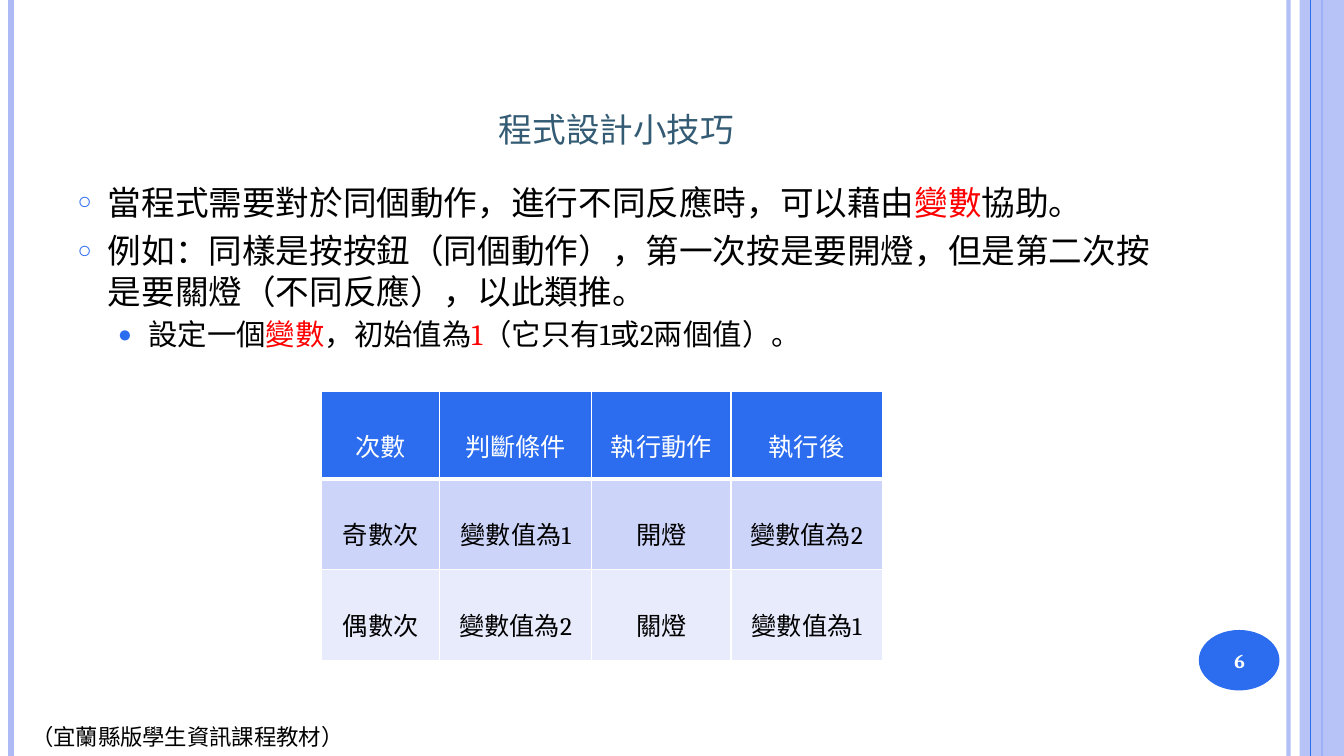
from lxml.etree import SubElement as Sub
from pptx import Presentation
from pptx.dml.color import RGBColor
from pptx.enum.shapes import MSO_CONNECTOR as Link, MSO_SHAPE as Kind
from pptx.enum.text import MSO_ANCHOR as Anchor, MSO_AUTO_SIZE as Auto, PP_ALIGN as Align
from pptx.oxml.ns import qn
from pptx.util import Pt

SCALE = 9144
FONT = "Cambria"
BLUE, PALE, BLACK, WHITE, RED = "2C6DF0", "ADBAF6", "000000", "FFFFFF", "FF0000"


def px(*nums):
    return [num * SCALE for num in nums]


def paint(part, color, alpha=100):
    part.solid()
    part.fore_color.rgb = RGBColor.from_string(color)
    if alpha < 100:
        node = part._xPr.find(qn("a:solidFill"))[0]
        Sub(node, qn("a:alpha"), val=str(alpha * 1000))


def write(para, *runs, size, color=BLACK, bold=False, caps=False,
          align=Align.LEFT, before=0, lines=1):
    para.alignment = align
    para.space_before = Pt(before)
    para.line_spacing = lines
    for item in runs:
        words, tint = item if isinstance(item, tuple) else (item, color)
        run = para.add_run()
        run.text = words
        font = run.font
        font.name, font.size, font.bold = FONT, Pt(size), bold
        font.color.rgb = RGBColor.from_string(tint)
        if caps:
            font._element.set("cap", "small")


def rule(slide, x, width, color, alpha=100):
    line = slide.shapes.add_connector(Link.STRAIGHT, *px(x, 0, x, 750))
    line.line.width = Pt(width)
    paint(line.line.fill, color, alpha)
    Sub(line._element.spPr, qn("a:effectLst"))


def block(slide, kind, box, color, alpha=100):
    shape = slide.shapes.add_shape(kind, *px(*box))
    shape.shadow.inherit = False
    paint(shape.fill, color, alpha)
    shape.line.fill.background()


def label(slide, box, words, wrap=True, anchor=Anchor.TOP, **style):
    frame = slide.shapes.add_textbox(*px(*box)).text_frame
    frame.word_wrap = wrap
    frame.vertical_anchor = anchor
    write(frame.paragraphs[0], words, **style)


def place(holder, box, anchor):
    holder.left, holder.top, holder.width, holder.height = px(*box)
    frame = holder.text_frame
    frame.auto_size = Auto.NONE
    frame.vertical_anchor = anchor
    return frame


def bullet(para, sign, ratio, left):
    props = para._p.get_or_add_pPr()
    props.set("marL", str(left * SCALE))
    props.set("indent", str(-30 * SCALE))
    Sub(Sub(props, qn("a:buClr")), qn("a:srgbClr"), val=BLUE)
    Sub(props, qn("a:buSzPct"), val=str(ratio * 1000))
    Sub(props, qn("a:buChar"), char=sign)


def points(frame, items):
    for pos, (level, runs) in enumerate(items):
        para = frame.add_paragraph() if pos else frame.paragraphs[0]
        para.level = level
        sign, ratio, left, size, gap = [("○", 70, 30, 24, 6), ("●", 80, 70, 21, 4)][level]
        bullet(para, sign, ratio, left)
        write(para, *runs, size=size, before=gap if pos else 0)


def edge(cell, foot):
    props = cell._tc.get_or_add_tcPr()
    for pos, (side, width) in enumerate(zip("LRTB", (1, 1, 1, foot))):
        line = props.makeelement(qn(f"a:ln{side}"), {"w": str(Pt(width))})
        Sub(Sub(line, qn("a:solidFill")), qn("a:srgbClr"), val=WHITE)
        props.insert(pos, line)


def grid(slide, box, wides, highs, rows):
    table = slide.shapes.add_table(len(highs), len(wides), *px(*box)).table
    for col, wide in zip(table.columns, px(*wides)):
        col.width = wide
    for row, high in zip(table.rows, px(*highs)):
        row.height = high
    fills = (BLUE, "CDD4F9", "E8EBFC")
    for r, words in enumerate(rows):
        for c, word in enumerate(words):
            cell = table.cell(r, c)
            cell.margin_left, cell.margin_top, cell.margin_right, cell.margin_bottom = px(7, 0, 7, 0)
            paint(cell.fill, fills[r])
            edge(cell, 1 if r else 3)
            write(cell.text_frame.paragraphs[0], word, size=18,
                  color=BLACK if r else WHITE, align=Align.CENTER, lines=2)


def main():
    deck = Presentation()
    deck.slide_width, deck.slide_height = px(1333, 750)
    slide = deck.slides.add_slide(deck.slide_layouts[1])

    rule(slide, 1278, 3, PALE, 93)
    rule(slide, 11, 4.5, PALE)
    rule(slide, 1311, 1.5, BLUE)
    block(slide, Kind.RECTANGLE, (1289, 0, 44, 750), PALE, 87)
    rule(slide, 1300, 0.75, BLUE)
    block(slide, Kind.OVAL, (1189, 625, 80, 60), BLUE)
    label(slide, (21, 712, 334, 37), "（宜蘭縣版學生資訊課程教材）", wrap=False, size=16)

    title, body = slide.placeholders
    frame = place(title, (67, 79, 1089, 76), Anchor.BOTTOM)
    write(frame.paragraphs[0], "程式設計小技巧", size=30, color="335B74",
          caps=True, align=Align.CENTER)

    key = ("變數", RED)
    points(place(body, (67, 175, 1089, 533), Anchor.TOP), [
        (0, ["當程式需要對於同個動作，進行不同反應時，可以藉由", key, "協助。"]),
        (0, ["例如：同樣是按按鈕（同個動作），第一次按是要開燈，但是第二次按是要關燈（不同反應），以此類推。"]),
        (1, ["設定一個", key, "，初始值為", ("1", RED), "（它只有1或2兩個值）。"]),
    ])

    label(slide, (1185, 627, 89, 57), "6", anchor=Anchor.MIDDLE, size=14,
          color=WHITE, bold=True, align=Align.CENTER)
    grid(slide, (319, 388, 556, 267), (117, 151, 138, 150), (87, 90, 90), [
        ("次數", "判斷條件", "執行動作", "執行後"),
        ("奇數次", "變數值為1", "開燈", "變數值為2"),
        ("偶數次", "變數值為2", "關燈", "變數值為1"),
    ])
    deck.save("out.pptx")


if __name__ == "__main__":
    main()
